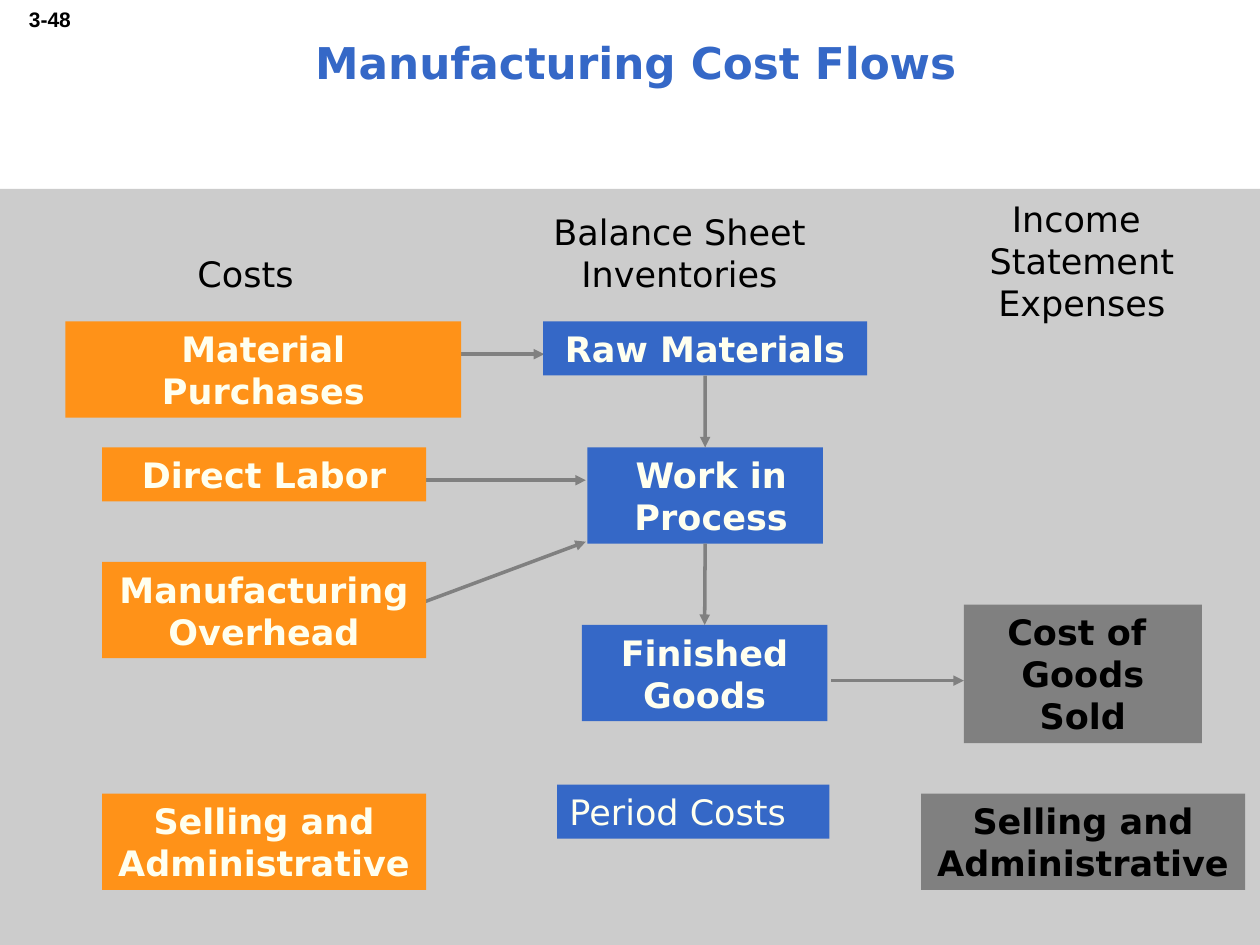
from lxml import etree
from pptx import Presentation
from pptx.dml.color import RGBColor
from pptx.enum.shapes import MSO_CONNECTOR, MSO_SHAPE
from pptx.enum.text import MSO_ANCHOR, MSO_AUTO_SIZE, PP_ALIGN
from pptx.oxml.ns import qn
from pptx.util import Cm, Pt

BLUE = RGBColor(0x35, 0x68, 0xC7)
ORANGE = RGBColor(0xFF, 0x92, 0x18)
GRAY = RGBColor(0x80, 0x80, 0x80)
PANEL_GRAY = RGBColor(0xCC, 0xCC, 0xCC)
IVORY = RGBColor(0xFF, 0xFF, 0xEF)
BLACK = RGBColor(0, 0, 0)
FONT = "DejaVu Sans"

# Box heights by number of text lines, and the shared box width
HEIGHTS = {1: 1.09, 2: 1.94, 3: 2.79}
BOX_WIDTH = 6.53
COST_LEFT = 2.06


def write(shape, text, color, size=20, bold=False, align=PP_ALIGN.CENTER,
          anchor=MSO_ANCHOR.TOP, font=FONT):
    """Fill a shape with one paragraph; a vertical tab is a line break."""
    frame = shape.text_frame
    frame.text = text
    frame.word_wrap = True
    frame.auto_size = MSO_AUTO_SIZE.NONE
    frame.vertical_anchor = anchor
    paragraph = frame.paragraphs[0]
    paragraph.alignment = align
    for run in paragraph.runs:
        run.font.name = font
        run.font.size = Pt(size)
        run.font.bold = bold
        run.font.color.rgb = color


def add_title(slide, text):
    title = slide.shapes.title
    title.left, title.top = Cm(0.43), Cm(0.2)
    title.width, title.height = Cm(24.77), Cm(2.11)
    write(title, text, BLUE, size=25, bold=True, anchor=MSO_ANCHOR.MIDDLE)


def add_label(slide, text, left, top, width, height, **style):
    label = slide.shapes.add_textbox(Cm(left), Cm(top), Cm(width), Cm(height))
    write(label, text, BLACK, **style)


def add_block(slide, left, top, width, height, fill):
    block = slide.shapes.add_shape(
        MSO_SHAPE.RECTANGLE, Cm(left), Cm(top), Cm(width), Cm(height))
    block.shadow.inherit = False
    block.fill.solid()
    block.fill.fore_color.rgb = fill
    block.line.fill.background()
    return block


def add_box(slide, text, left, top, fill, width=BOX_WIDTH, lines=2,
            color=IVORY, bold=True, align=PP_ALIGN.CENTER):
    box = add_block(slide, left, top, width, HEIGHTS[lines], fill)
    write(box, text, color, bold=bold, align=align)
    return box


def add_arrow(slide, x1=0, y1=0, x2=0, y2=0):
    arrow = slide.shapes.add_connector(
        MSO_CONNECTOR.STRAIGHT, Cm(x1), Cm(y1), Cm(x2), Cm(y2))
    arrow.line.color.rgb = GRAY
    arrow.line.width = Pt(2)
    etree.SubElement(arrow.line._get_or_add_ln(), qn("a:tailEnd"), type="triangle")
    etree.SubElement(arrow._element.spPr, qn("a:effectLst"))
    return arrow


def add_down_arrow(slide, upper, lower):
    arrow = add_arrow(slide)
    arrow.begin_connect(upper, 2)
    arrow.end_connect(lower, 0)


def main():
    prs = Presentation()
    prs.slide_width, prs.slide_height = Cm(25.4), Cm(19.05)
    slide = prs.slides.add_slide(prs.slide_layouts[5])

    # Page number, panel and title
    add_label(slide, "3-48", 0.28, 0, 1.4, 0.76, size=12, bold=True,
              align=PP_ALIGN.RIGHT, font="Arial")
    add_block(slide, 0, 3.81, 25.4, 15.24, PANEL_GRAY)
    add_title(slide, "Manufacturing Cost Flows")

    # Column headings
    add_label(slide, "Costs", 2.9, 4.96, 4.1, 1.09)
    add_label(slide, "Balance Sheet\vInventories", 10.2, 4.11, 7, 1.94)
    add_label(slide, "Income \vStatement\vExpenses", 18.85, 3.86, 5.92, 2.79)

    # Flows between columns, starting behind the boxes
    for ends in ((8.51, 7.14, 10.97, 7.14),
                 (7.65, 9.68, 11.81, 9.68),
                 (7.65, 12.47, 11.81, 10.92),
                 (16.76, 13.72, 19.43, 13.72)):
        add_arrow(slide, *ends)

    # Costs
    add_box(slide, "Material Purchases", 1.32, 6.48, ORANGE, width=7.98)
    add_box(slide, "Direct Labor", COST_LEFT, 9.02, ORANGE, lines=1)
    add_box(slide, "Manufacturing\vOverhead", COST_LEFT, 11.33, ORANGE)
    add_box(slide, "Selling and\vAdministrative", COST_LEFT, 16, ORANGE)

    # Balance sheet inventories
    raw_materials = add_box(slide, "Raw Materials", 10.95, 6.48, BLUE, lines=1)
    work_in_process = add_box(slide, " Work in\v Process", 11.84, 9.02, BLUE,
                              width=4.75)
    finished_goods = add_box(slide, "Finished\vGoods", 11.73, 12.6, BLUE,
                             width=4.95)
    add_box(slide, "Period Costs", 11.23, 15.82, BLUE, width=5.49, lines=1,
            bold=False, align=PP_ALIGN.LEFT)
    add_down_arrow(slide, raw_materials, work_in_process)
    add_down_arrow(slide, work_in_process, finished_goods)

    # Income statement expenses
    add_box(slide, "Cost of \vGoods\vSold", 19.43, 12.19, GRAY, width=4.8,
            lines=3, color=BLACK)
    add_box(slide, "Selling and\vAdministrative", 18.57, 16, GRAY, color=BLACK)

    prs.save("out.pptx")


if __name__ == "__main__":
    main()
